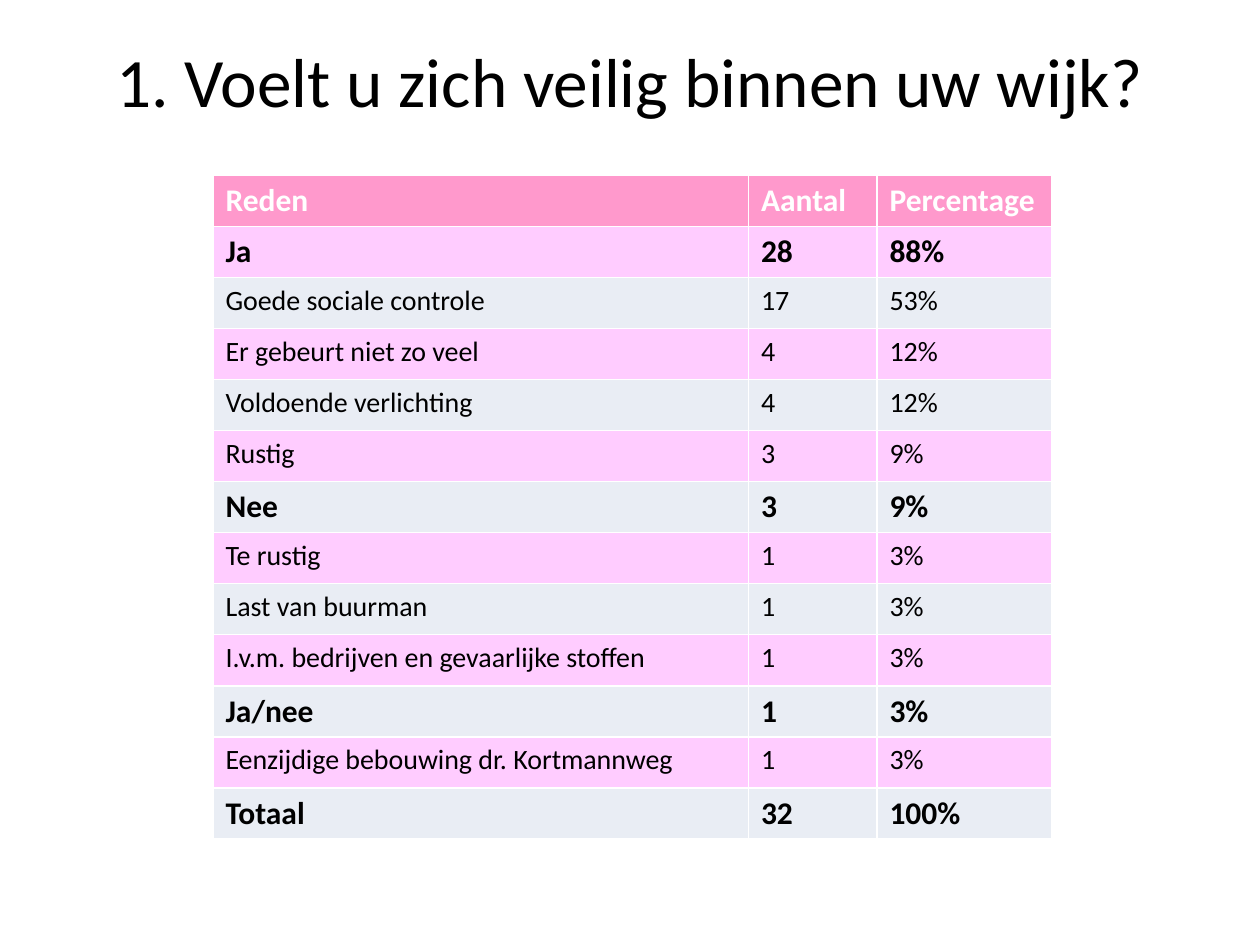
from pptx import Presentation
from pptx.dml.color import RGBColor
from pptx.enum.text import MSO_ANCHOR, PP_ALIGN
from pptx.util import Inches, Pt

TOP = MSO_ANCHOR.TOP
CENTER = PP_ALIGN.CENTER
TITLE_ONLY = 5

FONT = "Calibri"
BLACK, WHITE = "000000", "FFFFFF"
HEADER_FILL = "FF99CC"
BAND_FILLS = ("FFCCFF", "E9EDF4")

TITLE = "1. Voelt u zich veilig binnen uw wijk?"
HEADER = ("Reden", "Aantal", "Percentage")
ANSWERS = [
    ("Ja", "28", "88%"),
    ("Goede sociale controle", "17", "53%"),
    ("Er gebeurt niet zo veel", "4", "12%"),
    ("Voldoende verlichting", "4", "12%"),
    ("Rustig", "3", "9%"),
    ("Nee", "3", "9%"),
    ("Te rustig", "1", "3%"),
    ("Last van buurman", "1", "3%"),
    ("I.v.m. bedrijven en gevaarlijke stoffen", "1", "3%"),
    ("Ja/nee", "1", "3%"),
    ("Eenzijdige bebouwing dr. Kortmannweg", "1", "3%"),
    ("Totaal", "32", "100%"),
]
SUMMARY_ROWS = {"Ja", "Nee", "Ja/nee", "Totaal"}

TABLE_LEFT, TABLE_TOP, TABLE_HEIGHT = 1.69, 1.39, 5.27
COLUMN_WIDTHS = (4.25, 1.02, 1.39)


def rgb(hex_color):
    return RGBColor.from_string(hex_color)


def set_font(para, size, color, bold=False):
    font = para.font
    font.name, font.size, font.bold = FONT, Pt(size), bold
    font.color.rgb = rgb(color)


def add_title(page):
    title = page.shapes.title
    title.left, title.top = Inches(0.5), Inches(0.3)
    title.width, title.height = Inches(9), Inches(1.25)
    frame = title.text_frame
    frame.text = TITLE
    frame.vertical_anchor = TOP
    frame.margin_top = 0
    para = frame.paragraphs[0]
    para.alignment = CENTER
    set_font(para, 39.6, BLACK)


def fill_row(row, texts, fill, color, bold):
    for cell, text in zip(row.cells, texts):
        cell.text = text
        cell.fill.solid()
        cell.fill.fore_color.rgb = rgb(fill)
        set_font(cell.text_frame.paragraphs[0], 18 if bold else 16, color, bold)


def add_answer_table(page):
    table = page.shapes.add_table(
        len(ANSWERS) + 1, len(HEADER), Inches(TABLE_LEFT), Inches(TABLE_TOP),
        Inches(sum(COLUMN_WIDTHS)), Inches(TABLE_HEIGHT)).table
    for column, width in zip(table.columns, COLUMN_WIDTHS):
        column.width = Inches(width)

    fill_row(table.rows[0], HEADER, HEADER_FILL, WHITE, True)
    for index, answer in enumerate(ANSWERS):
        fill_row(table.rows[index + 1], answer, BAND_FILLS[index % 2], BLACK,
                 answer[0] in SUMMARY_ROWS)


def main():
    deck = Presentation()
    deck.slide_width, deck.slide_height = Inches(10), Inches(7.5)
    page = deck.slides.add_slide(deck.slide_layouts[TITLE_ONLY])
    add_title(page)
    add_answer_table(page)
    deck.save("out.pptx")


if __name__ == "__main__":
    main()
